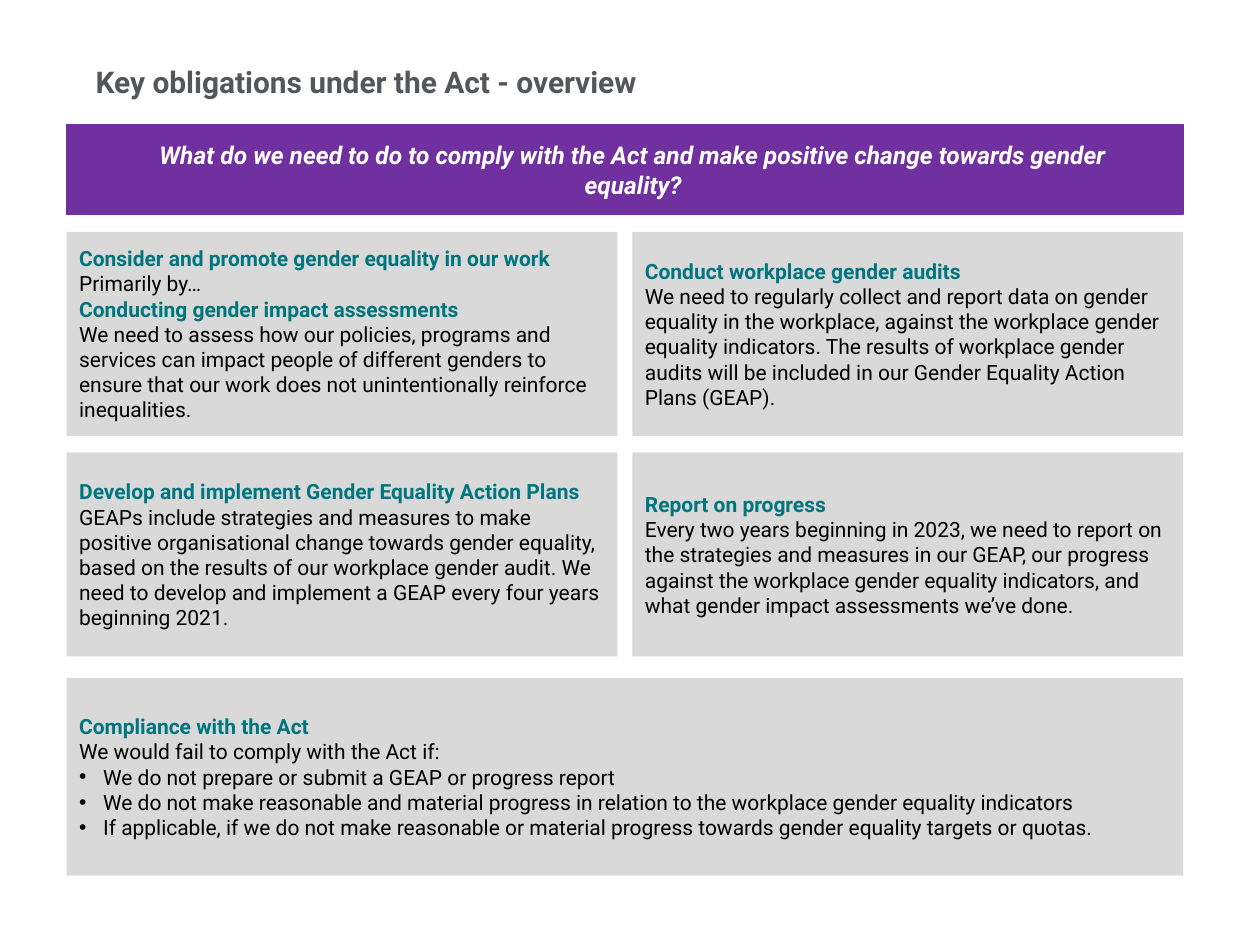
from lxml.etree import SubElement
from pptx import Presentation
from pptx.dml.color import RGBColor
from pptx.enum.shapes import MSO_SHAPE as Shape
from pptx.enum.text import MSO_ANCHOR as Anchor, PP_ALIGN as Align
from pptx.oxml.ns import qn
from pptx.util import Inches, Pt

# Content: each card is a list of (style, text)
TITLE = "Key obligations under the Act - overview"
ASK = ("What do we need to do to comply with the Act and make positive "
       "change towards gender equality?")
CARDS = [
    [("head", "Consider and promote gender equality in our work"),
     ("body", "Primarily by…"),
     ("head", "Conducting gender impact assessments"),
     ("body", "We need to assess how our policies, programs and services can "
              "impact people of different genders to ensure that our work does "
              "not unintentionally reinforce inequalities.")],
    [("head", "Conduct workplace gender audits"),
     ("body", "We need to regularly collect and report data on gender equality "
              "in the workplace, against the workplace gender equality "
              "indicators. The results of workplace gender audits will be "
              "included in our Gender Equality Action Plans (GEAP).")],
    [("head", "Develop and implement Gender Equality Action Plans"),
     ("body", "GEAPs include strategies and measures to make positive "
              "organisational change towards gender equality, based on the "
              "results of our workplace gender audit. We need to develop and "
              "implement a GEAP every four years beginning 2021.")],
    [("head", "Report on progress"),
     ("body", "Every two years beginning in 2023, we need to report on the "
              "strategies and measures in our GEAP, our progress against the "
              "workplace gender equality indicators, and what gender impact "
              "assessments we’ve done.")],
]
RULES = [
    ("head", "Compliance with the Act"),
    ("body", "We would fail to comply with the Act if:"),
    ("item", "We do not prepare or submit a GEAP or progress report"),
    ("item", "We do not make reasonable and material progress in relation to "
             "the workplace gender equality indicators"),
    ("item", "If applicable, if we do not make reasonable or material progress "
             "towards gender equality targets or quotas."),
]

# Theme: fills, and (size, colour, bold, italic) for each text style
THEME = {
    "font": "Roboto",
    "card": "D9D9D9",
    "band": "7030A0",
    "text": {
        "title": (17.1, "53565A", True, False),
        "ask": (14, "FFFFFF", True, True),
        "head": (12, "00757D", True, False),
        "body": (12, "000000", False, False),
        "item": (12, "000000", False, False),
    },
}

# Layout in inches
LEFT, WIDE = 0.53, 8.86
TOP, CARD_W, CARD_H = 1.84, 4.37, 1.62
STEP_X, STEP_Y = WIDE - CARD_W, 1.75
HANG = 0.19


def indent(para, left, first):
    props = para._p.get_or_add_pPr()
    props.set("marL", str(Inches(left)))
    props.set("indent", str(Inches(first)))
    return props


def write(frame, lines):
    frame.word_wrap = True
    for i, (style, text) in enumerate(lines):
        para = frame.add_paragraph() if i else frame.paragraphs[0]
        para.text = text
        para.alignment = Align.LEFT
        if style == "item":
            props = indent(para, HANG, -HANG)
            SubElement(props, qn("a:buFont"), typeface="Arial")
            SubElement(props, qn("a:buChar"), char="•")
        size, tint, bold, slant = THEME["text"][style]
        font = para.font
        font.name, font.size = THEME["font"], Pt(size)
        font.bold, font.italic = bold, slant
        font.color.rgb = RGBColor.from_string(tint)


def pad(frame, *sides):
    (frame.margin_left, frame.margin_top,
     frame.margin_right, frame.margin_bottom) = map(Inches, sides)


def panel(slide, box, fill, lines):
    shape = slide.shapes.add_shape(Shape.RECTANGLE, *map(Inches, box))
    shape.shadow.inherit = False
    shape.fill.solid()
    shape.fill.fore_color.rgb = RGBColor.from_string(fill)
    shape.line.fill.background()
    shape.text_frame.vertical_anchor = Anchor.MIDDLE
    write(shape.text_frame, lines)
    return shape


def main():
    deck = Presentation()
    deck.slide_width, deck.slide_height = Inches(10), Inches(7.5)
    slide = deck.slides.add_slide(deck.slide_layouts[6])

    # Title
    frame = slide.shapes.add_textbox(
        *map(Inches, (0.76, 0, 6.73, 0.79))).text_frame
    pad(frame, 0, 0, 0, 0)
    frame.vertical_anchor = Anchor.BOTTOM
    write(frame, [("title", TITLE)])

    # Question band
    band = panel(slide, (LEFT, 0.99, WIDE, 0.71), THEME["band"],
                 [("ask", ASK)])
    band.line.color.rgb = RGBColor.from_string(THEME["band"])
    band.line.width = Pt(0.75)
    pad(band.text_frame, 0.02, 0.05, 0.39, 0.05)
    para = band.text_frame.paragraphs[0]
    para.alignment, para.level = Align.CENTER, 1
    indent(para, 0.5, 0)

    # Two by two cards
    for i, lines in enumerate(CARDS):
        row, col = divmod(i, 2)
        box = LEFT + col * STEP_X, TOP + row * STEP_Y, CARD_W, CARD_H
        panel(slide, box, THEME["card"], lines)

    # Compliance panel
    panel(slide, (LEFT, 5.38, WIDE, 1.57), THEME["card"], RULES)

    deck.save("out.pptx")


if __name__ == "__main__":
    main()
